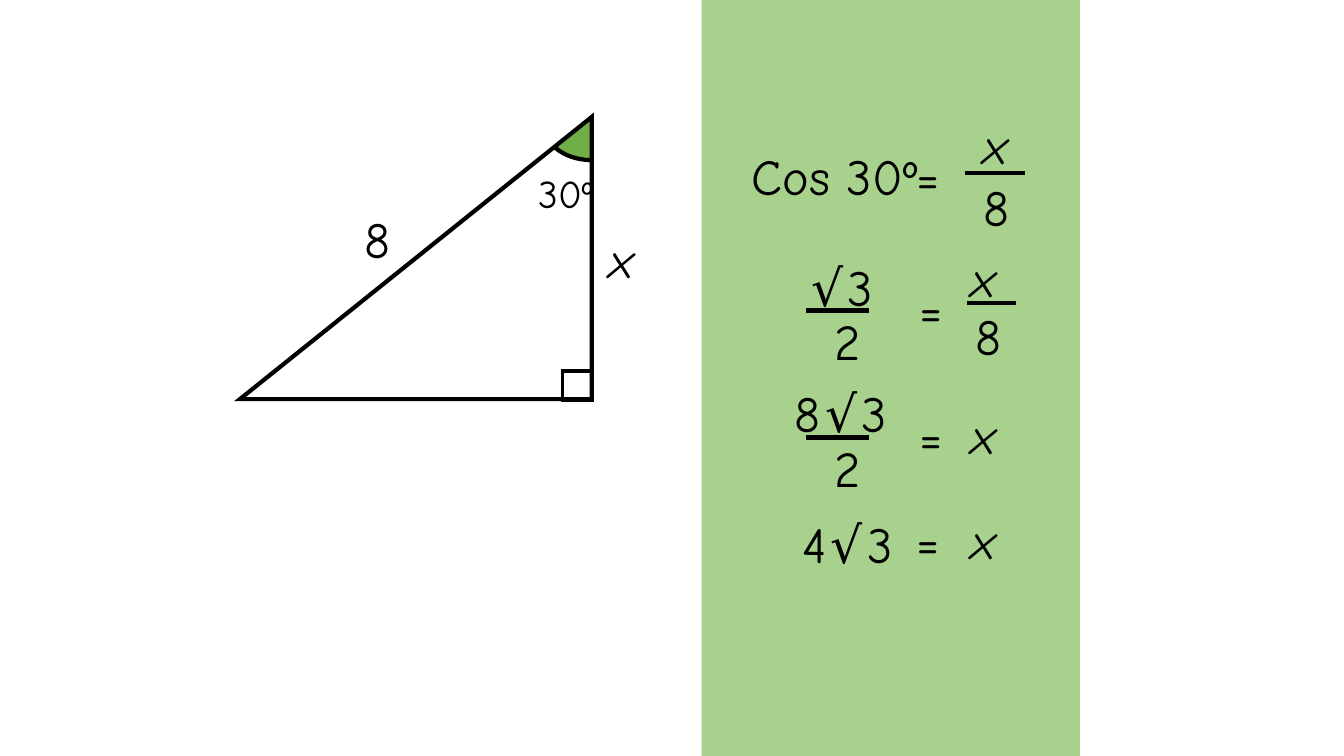
from dataclasses import dataclass

from lxml import etree
from pptx import Presentation
from pptx.dml.color import RGBColor
from pptx.enum.shapes import MSO_CONNECTOR as Connector, MSO_SHAPE as Shape
from pptx.enum.text import PP_ALIGN as Align
from pptx.oxml.ns import qn
from pptx.util import Inches, Pt


@dataclass(frozen=True)
class Theme:
    font: str = "Comic Neue"
    ink: RGBColor = RGBColor(0x00, 0x00, 0x00)
    panel: RGBColor = RGBColor(0xA9, 0xD1, 0x8E)
    angle: RGBColor = RGBColor(0x70, 0xAD, 0x47)
    body: int = 36
    small: int = 28
    stroke: float = 3
    thin: float = 2.25


@dataclass(frozen=True)
class Term:
    """A piece of an equation, placed relative to its step."""
    text: str
    left: float
    top: float
    width: float
    align: Align = Align.CENTER
    italic: bool = False
    tracking: int = 0


THEME = Theme()
TERM_HEIGHT = 0.71
PANEL = (6.96, 0, 3.75, 7.5)
TRIANGLE = (2.38, 1.16, 3.49, 2.8)

# Each step: top within the panel, terms, fraction bars (left, top, width)
STEPS = [
    (1.08,
     [Term("Cos 30º", 0.4, 0.31, 2.2, Align.LEFT),
      Term("=", 2.03, 0.31, 0.86, Align.LEFT),
      Term(" x", 2.23, 0, 1.2, italic=True),
      Term("8", 2.38, 0.62, 1.08)],
     [(2.61, 0.64, 0.6)]),
    (2.4,
     [Term(" √3", 0.66, 0.09, 1.26, tracking=3),
      Term(" 2", 1.05, 0.63, 0.63, Align.LEFT),
      Term("=", 1.92, 0.31, 0.71),
      Term(" x", 2.22, 0, 0.99, italic=True),
      Term("8", 2.4, 0.58, 0.89)],
     [(1.03, 0.68, 0.63), (2.63, 0.61, 0.49)]),
    (3.74,
     [Term("8√3", 0.75, 0, 1.26, tracking=3),
      Term(" 2", 1.05, 0.55, 0.63, Align.LEFT),
      Term("=", 1.92, 0.23, 0.71),
      Term(" x", 2.22, 0.22, 0.99, italic=True)],
     [(1.03, 0.6, 0.63)]),
    (5.0,
     [Term("4√3", 0.9, 0.04, 1.26, Align.LEFT, tracking=3),
      Term("=", 1.89, 0.01, 0.71),
      Term(" x", 2.22, 0, 0.99, italic=True)],
     []),
]


def add_text(shapes, text, left, top, width, height=TERM_HEIGHT, size=THEME.body,
             align=Align.LEFT, italic=False, tracking=0):
    box = shapes.add_textbox(*map(Inches, (left, top, width, height)))
    box.text_frame.word_wrap = True
    para = box.text_frame.paragraphs[0]
    para.alignment = align
    span = para.add_run()
    span.text = text
    if tracking:
        span.font._element.set("spc", str(tracking * 100))
    font = para.font
    font.name, font.size, font.italic = THEME.font, Pt(size), italic
    font.color.rgb = THEME.ink


def style(shape, fill=None, stroke=None):
    shape.shadow.inherit = False
    if fill is None:
        shape.fill.background()
    else:
        shape.fill.solid()
        shape.fill.fore_color.rgb = fill
    if stroke is None:
        shape.line.fill.background()
    else:
        shape.line.color.rgb = THEME.ink
        shape.line.width = Pt(stroke)
        outline = shape._element.spPr.find(qn("a:ln"))
        etree.SubElement(outline, qn("a:miter"), lim="800000")


def add_outline(shapes, points, closed):
    """Polygon or open line through points given in inches."""
    first, *rest = [(x * 1000, y * 1000) for x, y in points]
    builder = shapes.build_freeform(*first, scale=Inches(1) / 1000)
    builder.add_line_segments(rest, close=closed)
    return builder.convert_to_shape()


def add_bar(shapes, left, top, width):
    bar = shapes.add_connector(Connector.STRAIGHT, Inches(left), Inches(top),
                               Inches(left + width), Inches(top))
    bar.line.color.rgb = THEME.ink
    bar.line.width = Pt(THEME.stroke)
    etree.SubElement(bar._element.spPr, qn("a:effectLst"))


def draw_angle(shapes, apex_x, apex_y):
    """Green sector under the top corner, with its arc stroked."""
    corners = [(0, 0.41), (-0.14, 0.41), (-0.28, 0.37), (-0.38, 0.28)]
    steps = 16
    arc = []
    for step in range(steps + 1):
        t = step / steps
        weights = ((1 - t) ** 3, 3 * t * (1 - t) ** 2, 3 * t * t * (1 - t), t ** 3)
        arc.append((apex_x + sum(w * x for w, (x, y) in zip(weights, corners)),
                    apex_y + sum(w * y for w, (x, y) in zip(weights, corners))))
    style(add_outline(shapes, arc + [(apex_x, apex_y)], True), fill=THEME.angle)
    style(add_outline(shapes, arc, False), stroke=THEME.stroke)


def draw_triangle(page, left, top, width, height):
    shapes = page.shapes.add_group_shape().shapes
    right, bottom = left + width, top + height
    draw_angle(shapes, right + 0.01, top + 0.02)
    add_text(shapes, "30º", right - 0.63, top + 0.47, 1.26, 0.57, THEME.small)

    # Triangle with its right angle at the lower right
    triangle = shapes.add_shape(Shape.RIGHT_TRIANGLE,
                                *map(Inches, (left, top, width, height)))
    triangle._element.spPr.find(qn("a:xfrm")).set("flipH", "1")
    style(triangle, stroke=THEME.stroke)
    corner = shapes.add_shape(Shape.RECTANGLE, *map(
        Inches, (right - 0.29, bottom - 0.28, 0.3, 0.29)))
    style(corner, stroke=THEME.thin)

    # Side lengths
    add_text(shapes, "x", right + 0.08, top + 1.05, 0.53, italic=True)
    add_text(shapes, "8", left + 1.14, top + 0.86, 1.26)


def draw_solution(page, left, top, width, height):
    panel = page.shapes.add_shape(Shape.RECTANGLE,
                                  *map(Inches, (left, top, width, height)))
    style(panel, fill=THEME.panel)
    for offset, terms, bars in STEPS:
        shapes = page.shapes.add_group_shape().shapes
        for term in terms:
            add_text(shapes, term.text, left + term.left, top + offset + term.top,
                     term.width, align=term.align, italic=term.italic,
                     tracking=term.tracking)
        for bar_left, bar_top, bar_width in bars:
            add_bar(shapes, left + bar_left, top + offset + bar_top, bar_width)


def main():
    deck = Presentation()
    deck.slide_width, deck.slide_height = Inches(13.33), Inches(7.5)
    page = deck.slides.add_slide(deck.slide_layouts[6])
    draw_solution(page, *PANEL)
    draw_triangle(page, *TRIANGLE)
    deck.save("out.pptx")


if __name__ == "__main__":
    main()
